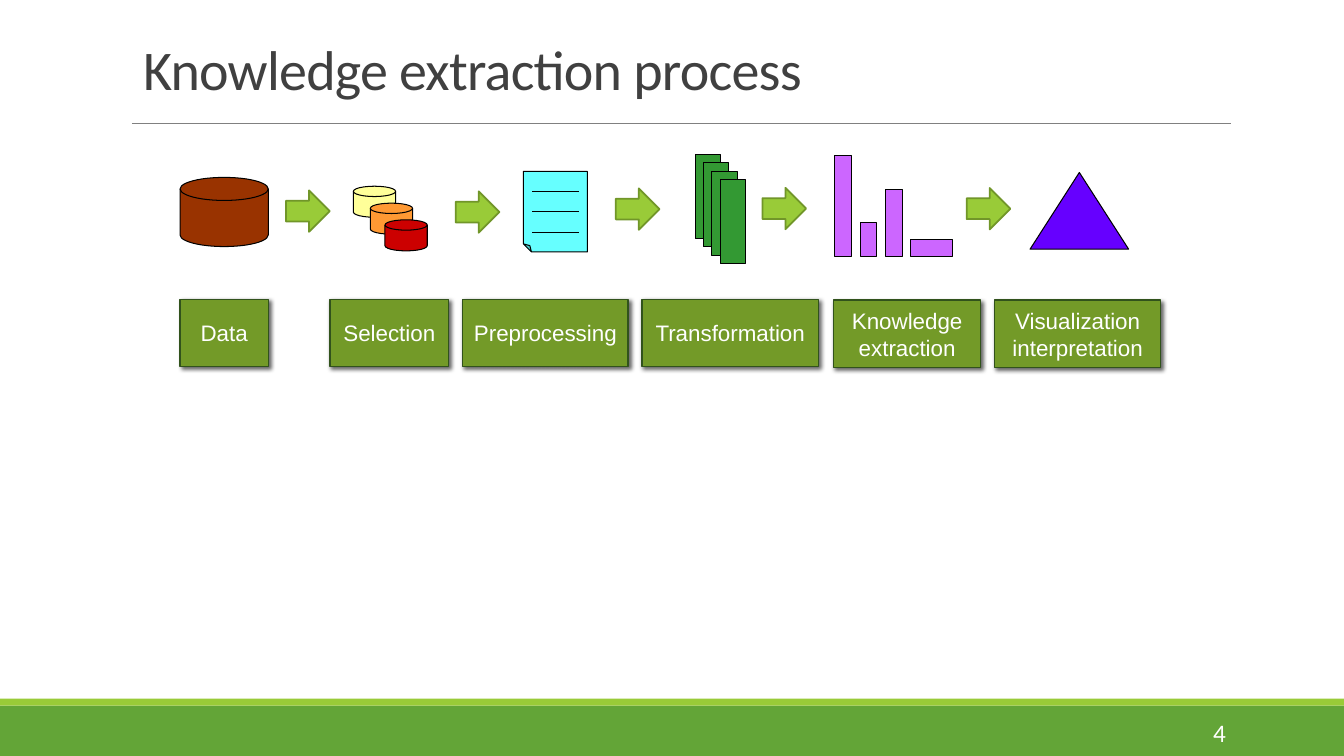
"""Build the knowledge extraction process slide."""
from lxml.etree import SubElement
from pptx import Presentation
from pptx.dml.color import RGBColor
from pptx.enum.shapes import MSO_CONNECTOR, MSO_SHAPE
from pptx.enum.text import MSO_ANCHOR, MSO_AUTO_SIZE, PP_ALIGN
from pptx.oxml.ns import qn
from pptx.util import Pt

WHITE = RGBColor(0xFF, 0xFF, 0xFF)
BLACK = RGBColor(0x00, 0x00, 0x00)
GRAY = RGBColor(0x80, 0x80, 0x80)
TITLE_GRAY = RGBColor(0x40, 0x40, 0x40)
FOOTER_GREEN = RGBColor(0x63, 0xA5, 0x37)
LIME = RGBColor(0x99, 0xCB, 0x38)
ARROW_EDGE = RGBColor(0x71, 0x96, 0x29)
LABEL_GREEN = RGBColor(0x73, 0x9A, 0x28)
LABEL_EDGE = RGBColor(0x31, 0x52, 0x1C)
BROWN = RGBColor(0x99, 0x33, 0x00)
YELLOW = RGBColor(0xFF, 0xFF, 0x99)
ORANGE = RGBColor(0xFF, 0x99, 0x33)
RED = RGBColor(0xCC, 0x00, 0x00)
CYAN = RGBColor(0x66, 0xFF, 0xFF)
SHEET_GREEN = RGBColor(0x33, 0x99, 0x33)
PURPLE = RGBColor(0xCC, 0x66, 0xFF)
VIOLET = RGBColor(0x66, 0x00, 0xFF)

TITLE = "Knowledge extraction process"
PAGE_NUMBER = "4"
LABELS = [
    ("Data", 128.6, 213.8, 63),
    ("Selection", 235.6, 213.8, 85),
    ("Preprocessing", 330.4, 213.8, 118.3),
    ("Transformation", 458.5, 213.8, 126.2),
    ("Knowledge extraction", 595.4, 214.4, 105.2),
    ("Visualization\vinterpretation", 710.5, 214.4, 118.6),
]
LABEL_HEIGHT = 48.2
DISKS = [
    (128.6, 126.7, 63, 49.4, BROWN),
    (252.4, 133, 30.2, 22.2, YELLOW),
    (264.5, 145.1, 30.2, 22.2, ORANGE),
    (275, 157, 30.2, 22.2, RED),
]
ARROWS = [(204.3, 136), (325.5, 136.7), (439.9, 134.6), (544.6, 134.2), (690.5, 134.3)]
ARROW_SIZE = (31.2, 29.6)
BARS = [(596.2, 12.2, 72), (614.4, 12, 24), (632.4, 12, 48), (650.4, 30, 12)]
BAR_BASE = 183.1
SHEET_COUNT = 4
SHEET_START, SHEET_STEP = (496.5, 110.4), 6
SHEET_SIZE = (18, 60)
RULED_LINES = 3
RULED_TOP, RULED_STEP = 137, 14.4


def add_part(shapes, kind, frame, fill, edge=BLACK, width=0.75):
    part = shapes.add_shape(kind, *map(Pt, frame))
    part.shadow.inherit = False
    part.fill.solid()
    part.fill.fore_color.rgb = fill
    if edge is None:
        part.line.fill.background()
    else:
        part.line.color.rgb = edge
        part.line.width = Pt(width)
    return part


def add_line(shapes, left, right, top, color, width):
    line = shapes.add_connector(MSO_CONNECTOR.STRAIGHT, Pt(left), Pt(top), Pt(right), Pt(top))
    line.line.color.rgb = color
    line.line.width = Pt(width)
    SubElement(line._element.spPr, qn("a:effectLst"))


def add_shadow(box):
    effects = box._element.spPr.find(qn("a:effectLst"))
    shadow = SubElement(effects, qn("a:outerShdw"), blurRad=str(Pt(3)), dist=str(Pt(2)),
                        dir=str(45 * 60000), algn="tl", rotWithShape="0")
    color = SubElement(shadow, qn("a:srgbClr"), val=str(BLACK))
    SubElement(color, qn("a:alpha"), val="60000")


def write(box, text, font, size, color, align):
    frame = box.text_frame
    frame.text = text
    frame.word_wrap = True
    frame.vertical_anchor = MSO_ANCHOR.MIDDLE
    para = frame.paragraphs[0]
    para.alignment = align
    for span in para.runs:
        span.font.name = font
        span.font.size = Pt(size)
        span.font.color.rgb = color


def add_frame(page):
    shapes = page.shapes
    add_part(shapes, MSO_SHAPE.RECTANGLE, (0, 504, 960, 36), FOOTER_GREEN, None)
    add_part(shapes, MSO_SHAPE.RECTANGLE, (0, 499, 960, 5), LIME, None)
    add_line(shapes, 94.3, 879, 88, GRAY, 0.5)
    number = shapes.add_textbox(Pt(779.8), Pt(508.5), Pt(103), Pt(28.8))
    write(number, PAGE_NUMBER, "Calibri", 18, WHITE, PP_ALIGN.RIGHT)

    title = shapes.title
    title.left, title.top, title.width, title.height = map(Pt, (95, 18.7, 792, 57.6))
    write(title, TITLE, "Calibri", 40, TITLE_GRAY, PP_ALIGN.LEFT)
    title.text_frame.vertical_anchor = MSO_ANCHOR.BOTTOM
    title.text_frame.auto_size = MSO_AUTO_SIZE.NONE
    para = title.text_frame.paragraphs[0]
    para.line_spacing = 0.85
    para.runs[0].font._element.set("spc", "-50")


def add_icons(shapes):
    for *frame, fill in DISKS:
        add_part(shapes, MSO_SHAPE.FLOWCHART_MAGNETIC_DISK, frame, fill)

    document = shapes.add_group_shape().shapes
    paper = add_part(document, MSO_SHAPE.FOLDED_CORNER, (367.9, 128.4, 57.6, 45.6), CYAN)
    paper.rotation = 90
    geometry = paper._element.spPr.find(qn("a:prstGeom"))
    SubElement(geometry.find(qn("a:avLst")), qn("a:gd"), name="adj", fmla="val 12500")
    for row in range(RULED_LINES):
        add_line(document, 380.2, 413.3, RULED_TOP + row * RULED_STEP, BLACK, 0.75)

    sheets = shapes.add_group_shape().shapes
    for index in range(SHEET_COUNT):
        corner = [start + index * SHEET_STEP for start in SHEET_START]
        add_part(sheets, MSO_SHAPE.RECTANGLE, (*corner, *SHEET_SIZE), SHEET_GREEN)

    bars = shapes.add_group_shape().shapes
    for left, width, height in BARS:
        frame = (left, BAR_BASE - height, width, height)
        add_part(bars, MSO_SHAPE.RECTANGLE, frame, PURPLE)

    add_part(shapes, MSO_SHAPE.ISOSCELES_TRIANGLE, (735.8, 123.2, 70.4, 54.8), VIOLET)
    for corner in ARROWS:
        add_part(shapes, MSO_SHAPE.RIGHT_ARROW, (*corner, *ARROW_SIZE), LIME, ARROW_EDGE, 1.25)


def add_labels(shapes):
    for text, left, top, width in LABELS:
        frame = (left, top, width, LABEL_HEIGHT)
        box = add_part(shapes, MSO_SHAPE.RECTANGLE, frame, LABEL_GREEN, LABEL_EDGE, 1)
        add_shadow(box)
        write(box, text, "Arial", 16, WHITE, PP_ALIGN.CENTER)


def main():
    deck = Presentation()
    deck.slide_width, deck.slide_height = Pt(960), Pt(540)
    page = deck.slides.add_slide(deck.slide_layouts[5])
    add_frame(page)
    add_icons(page.shapes)
    add_labels(page.shapes)
    deck.save("out.pptx")


if __name__ == "__main__":
    main()
